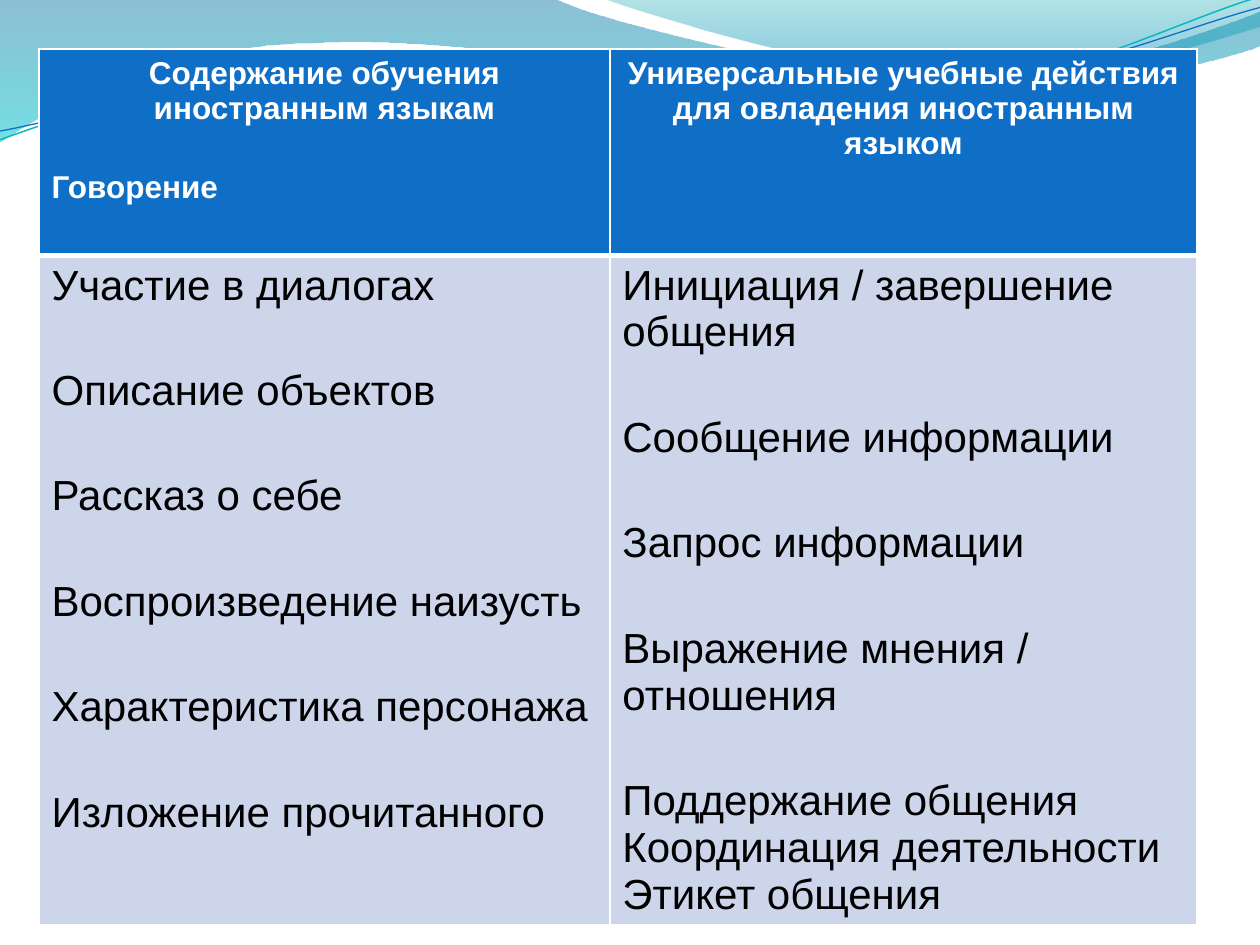
import math
import pptx
import pptx.dml.color
import pptx.enum.text
import pptx.oxml
import pptx.oxml.ns
import pptx.util
from dataclasses import dataclass

Inches, Pt = pptx.util.Inches, pptx.util.Pt


@dataclass(frozen=True)
class Theme:
    font: str = "Arial"
    header_size: int = 18
    body_size: int = 24
    header_gap: float = 25
    body_gap: float = 33.5
    header_fill: str = "0F6FC6"
    body_fill: str = "CCD5EA"
    header_text: str = "FFFFFF"
    body_text: str = "000000"
    border: str = "FFFFFF"


THEME = Theme()

# Each paragraph is (text, whether a gap stands above it).
HEADERS = [
    [("Содержание обучения иностранным языкам", False), ("Говорение", True)],
    [("Универсальные учебные действия для овладения иностранным языком", False)],
]
BODIES = [
    [
        ("Участие в диалогах", False),
        ("Описание объектов", True),
        ("Рассказ о себе", True),
        ("Воспроизведение наизусть", True),
        ("Характеристика персонажа", True),
        ("Изложение прочитанного", True),
    ],
    [
        ("Инициация / завершение общения", False),
        ("Сообщение информации", True),
        ("Запрос информации", True),
        ("Выражение мнения / отношения", True),
        ("Поддержание общения", True),
        ("Координация деятельности", False),
        ("Этикет общения", False),
    ],
]
TABLE_LEFT, TABLE_TOP = 0.31, 0.39
COLUMN_WIDTHS = [4.53, 4.66]
ROW_HEIGHTS = [1.64, 5.29]

# Each step lists points: one end point, or two control points and an end point.
# Gradient stops are (colour, opacity in percent, position).
BANDS = [
    ([[(0, -0.01)], [(4.4, -0.01)],
      [(4.76, 0.17), (6.64, 0.63), (7.58, 0.63)],
      [(8.53, 0.63), (9.58, 0.26), (10, 0.09)], [(10.01, 0.36)],
      [(9.83, 0.44), (8.7, 0.76), (7.46, 0.75)],
      [(6.22, 0.75), (3.82, 0.28), (2.57, 0.34)],
      [(1.29, 0.35), (0.46, 0.83), (-0.01, 1.13)]],
     [("0074A1", 45, 0), ("00C6CF", 55, 1)]),
    ([[(4.79, -0.01)],
      [(5.09, 0.11), (6.82, 0.62), (7.69, 0.65)],
      [(8.56, 0.69), (9.61, 0.32), (10, 0.21)], [(10, 0)]],
     [("00A1A9", 30, 0), ("008BBF", 45, 0.8)]),
]
WAVES = [
    ([[(0, 1.11)],
      [(0.48, 0.93), (1.58, 0.57), (2.77, 0.52)],
      [(3.95, 0.47), (5.93, 0.89), (7.13, 0.8)],
      [(8.33, 0.71), (9.38, 0.15), (9.98, -0.02)]], (4.99, 0.58), "0AB8BF", 0.85),
    ([[(0, 1.04)],
      [(0.47, 0.96), (1.64, 0.61), (2.83, 0.56)],
      [(4.03, 0.51), (5.97, 0.83), (7.17, 0.75)],
      [(8.36, 0.67), (9.41, 0.21), (10, 0.06)]], (5, 0.59), "0F6FC6", 0.75),
]
WAVE_ROTATION = 357.3
UNITS_PER_INCH = 1000


def rgb(value):
    return pptx.dml.color.RGBColor.from_string(value)


def add_outline(slide, steps, close):
    """Build a freeform through the end points, then bend its curved segments."""
    steps = [[(round(x * UNITS_PER_INCH), round(y * UNITS_PER_INCH)) for x, y in step]
             for step in steps]
    ends = [step[-1] for step in steps]
    builder = slide.shapes.build_freeform(*ends[0], scale=Inches(1) / UNITS_PER_INCH)
    builder.add_line_segments(ends[1:], close=close)
    shape = builder.convert_to_shape()
    shape.shadow.inherit = False
    left, top = (min(axis) for axis in zip(*ends))
    segments = shape.element.spPr.findall(".//" + pptx.oxml.ns.qn("a:lnTo"))
    for segment, step in zip(segments, steps[1:]):
        if len(step) == 3:
            points = "".join(f'<a:pt x="{x - left}" y="{y - top}"/>' for x, y in step)
            segment.getparent().replace(segment, pptx.oxml.parse_xml(
                f'<a:cubicBezTo {pptx.oxml.ns.nsdecls("a")}>{points}</a:cubicBezTo>'))
    return shape


def add_band(slide, steps, stops):
    shape = add_outline(slide, steps, close=True)
    shape.line.fill.background()
    shape.fill.gradient()
    shape.fill.gradient_angle = 270
    for stop, (color, _, position) in zip(shape.fill.gradient_stops, stops):
        stop.color.rgb = rgb(color)
        stop.position = position
    colors = shape.element.spPr.findall(".//" + pptx.oxml.ns.qn("a:srgbClr"))
    for element, (_, opacity, _) in zip(colors, stops):
        alpha = element.makeelement(pptx.oxml.ns.qn("a:alpha"), {"val": str(opacity * 1000)})
        element.append(alpha)


def turn(point, center, degrees):
    angle = math.radians(degrees)
    x, y = point[0] - center[0], point[1] - center[1]
    return (center[0] + x * math.cos(angle) - y * math.sin(angle),
            center[1] + x * math.sin(angle) + y * math.cos(angle))


def add_wave(slide, steps, center, color, width):
    """Draw a wave level, then rotate it so that it passes through its steps."""
    level = [[turn(point, center, -WAVE_ROTATION) for point in step] for step in steps]
    shape = add_outline(slide, level, close=False)
    shape.rotation = WAVE_ROTATION
    shape.fill.background()
    shape.line.color.rgb = rgb(color)
    shape.line.width = Pt(width)


def set_borders(cell, widths):
    properties = cell._tc.get_or_add_tcPr()
    for index, (side, width) in enumerate(zip("LRTB", widths)):
        properties.insert(index, pptx.oxml.parse_xml(
            f'<a:ln{side} {pptx.oxml.ns.nsdecls("a")} w="{Pt(width)}"><a:solidFill>'
            f'<a:srgbClr val="{THEME.border}"/></a:solidFill></a:ln{side}>'))


def fill_cell(cell, lines, is_header):
    set_borders(cell, (1, 1, 1, 3) if is_header else (1, 1, 3, 1))
    cell.fill.solid()
    cell.fill.fore_color.rgb = rgb(THEME.header_fill if is_header else THEME.body_fill)
    cell.text_frame.text = "\n".join(text for text, _ in lines)
    for index, (paragraph, (_, gap)) in enumerate(zip(cell.text_frame.paragraphs, lines)):
        if is_header and index == 0:
            paragraph.alignment = pptx.enum.text.PP_ALIGN.CENTER
        if gap:
            paragraph.space_before = Pt(THEME.header_gap if is_header else THEME.body_gap)
        font = paragraph.runs[0].font
        font.name = THEME.font
        font.size = Pt(THEME.header_size if is_header else THEME.body_size)
        font.bold = is_header
        font.color.rgb = rgb(THEME.header_text if is_header else THEME.body_text)


def add_skills_table(slide):
    table = slide.shapes.add_table(
        len(ROW_HEIGHTS), len(COLUMN_WIDTHS), Inches(TABLE_LEFT), Inches(TABLE_TOP),
        Inches(sum(COLUMN_WIDTHS)), Inches(sum(ROW_HEIGHTS))).table
    for column, width in zip(table.columns, COLUMN_WIDTHS):
        column.width = Inches(width)
    for row, height in zip(table.rows, ROW_HEIGHTS):
        row.height = Inches(height)
    for row, contents in enumerate([HEADERS, BODIES]):
        for column, lines in enumerate(contents):
            fill_cell(table.cell(row, column), lines, is_header=row == 0)


def main():
    presentation = pptx.Presentation()
    presentation.slide_width, presentation.slide_height = Inches(10), Inches(7.5)
    slide = presentation.slides.add_slide(presentation.slide_layouts[6])
    for band in BANDS:
        add_band(slide, *band)
    for wave in WAVES:
        add_wave(slide, *wave)
    add_skills_table(slide)
    presentation.save("out.pptx")


if __name__ == "__main__":
    main()
